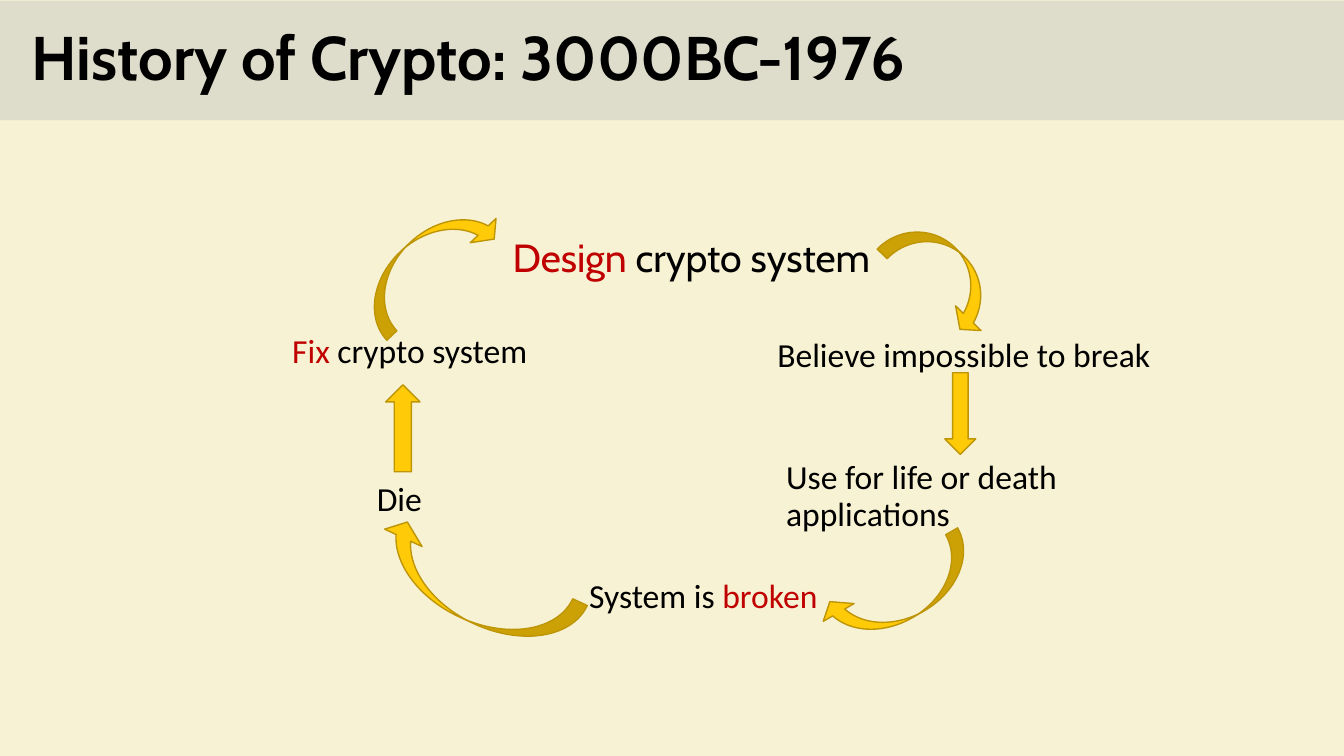
from lxml import etree
from pptx import Presentation
from pptx.dml.color import RGBColor
from pptx.enum.shapes import MSO_SHAPE
from pptx.enum.text import MSO_ANCHOR
from pptx.oxml.ns import qn
from pptx.util import Inches, Pt

RECT, CURVED, UP = MSO_SHAPE.RECTANGLE, MSO_SHAPE.CURVED_DOWN_ARROW, MSO_SHAPE.UP_ARROW
TOP, MIDDLE = MSO_ANCHOR.TOP, MSO_ANCHOR.MIDDLE

THEME = {
    "paper": RGBColor.from_string("F7F2D3"),
    "band": RGBColor.from_string("BFBFBF"),
    "ink": RGBColor.from_string("000000"),
    "accent": RGBColor.from_string("C00000"),
    "arrow": RGBColor.from_string("FFCA08"),
    "arrow_line": RGBColor.from_string("BD9506"),
    "heading_font": "Cabin",
    "body_font": "Calibri",
    "title_size": 44,
    "lead_size": 28,
    "body_size": 24,
}

prs = Presentation()
prs.slide_width, prs.slide_height = Inches(13.333), Inches(7.5)
slide = prs.slides.add_slide(prs.slide_layouts[6])
slide.background.fill.solid()
slide.background.fill.fore_color.rgb = THEME["paper"]


def box(left, top, width, height):
    """Turn percentages of the slide's width and height into lengths."""
    col, row = prs.slide_width / 100, prs.slide_height / 100
    return round(left * col), round(top * row), round(width * col), round(height * row)


def add_text(text, at, size=THEME["body_size"], font=THEME["body_font"], bold=False,
             accent="", anchor=TOP, line_spacing=0.9, space_before=10):
    """Add a text box in which the word given as accent is coloured."""
    tf = slide.shapes.add_textbox(*box(*at)).text_frame
    tf.word_wrap = True
    tf.vertical_anchor = anchor
    p = tf.paragraphs[0]
    p.line_spacing = line_spacing
    p.space_before = Pt(space_before)
    before, word, after = text.partition(accent) if accent else (text, "", "")
    for part, colour in ((before, "ink"), (word, "accent"), (after, "ink")):
        if part:
            r = p.add_run()
            r.text = part
            r.font.size, r.font.name, r.font.bold = Pt(size), font, bold
            r.font.color.rgb = THEME[colour]


# Title band
band = slide.shapes.add_shape(RECT, *box(0, 0.1, 100, 15.8))
band.shadow.inherit = False
band.line.fill.background()
band.fill.solid()
band.fill.fore_color.rgb = THEME["band"]
band_colour = band.fill._xPr.find(qn("a:solidFill"))[0]
etree.SubElement(band_colour, qn("a:alpha")).set("val", "43000")

add_text("History of Crypto: 3000BC-1976", (1.6, 0, 98.4, 15.9), size=THEME["title_size"],
         font=THEME["heading_font"], bold=True, anchor=MIDDLE, space_before=0)

# Stages of the cycle, clockwise from the top
add_text("Design crypto system", (37.4, 29.6, 30.5, 11.9), size=THEME["lead_size"],
         font=THEME["heading_font"], accent="Design", line_spacing=1.1)
stages = [
    ("Believe impossible to break", "", (57.1, 44.1, 30.5, 11.9)),
    ("Use for life or death applications", "", (57.75, 60.3, 31.35, 14)),
    ("System is broken", "broken", (43.1, 76, 22.1, 9.5)),
    ("Die", "", (27.3, 63.1, 10.5, 8.5)),
    ("Fix crypto system", "Fix", (21, 43.6, 23.55, 8.5)),
]
for text, accent, at in stages:
    add_text(text, at, accent=accent)

# Arrows between the stages, clockwise from the top
arrows = [
    (CURVED, 44.1, (65.3, 32.8, 9.9, 7.3)),
    (UP, 180, (70.3, 49.3, 2.3, 10.8)),
    (CURVED, 150, (60.8, 74.8, 12.3, 7.3)),
    (CURVED, 204.9, (27.15, 73.6, 16.3, 8.5)),
    (UP, 0, (28.7, 50.9, 2.55, 11.5)),
    (CURVED, 316.7, (25.7, 31.2, 12.3, 7.3)),
]
for kind, rotation, at in arrows:
    sp = slide.shapes.add_shape(kind, *box(*at))
    sp.shadow.inherit = False
    sp.rotation = rotation
    if kind == CURVED:
        sp.adjustments[1] = 0.644
    sp.fill.solid()
    sp.fill.fore_color.rgb = THEME["arrow"]
    sp.line.color.rgb = THEME["arrow_line"]
    sp.line.width = Pt(1)

prs.save("out.pptx")
